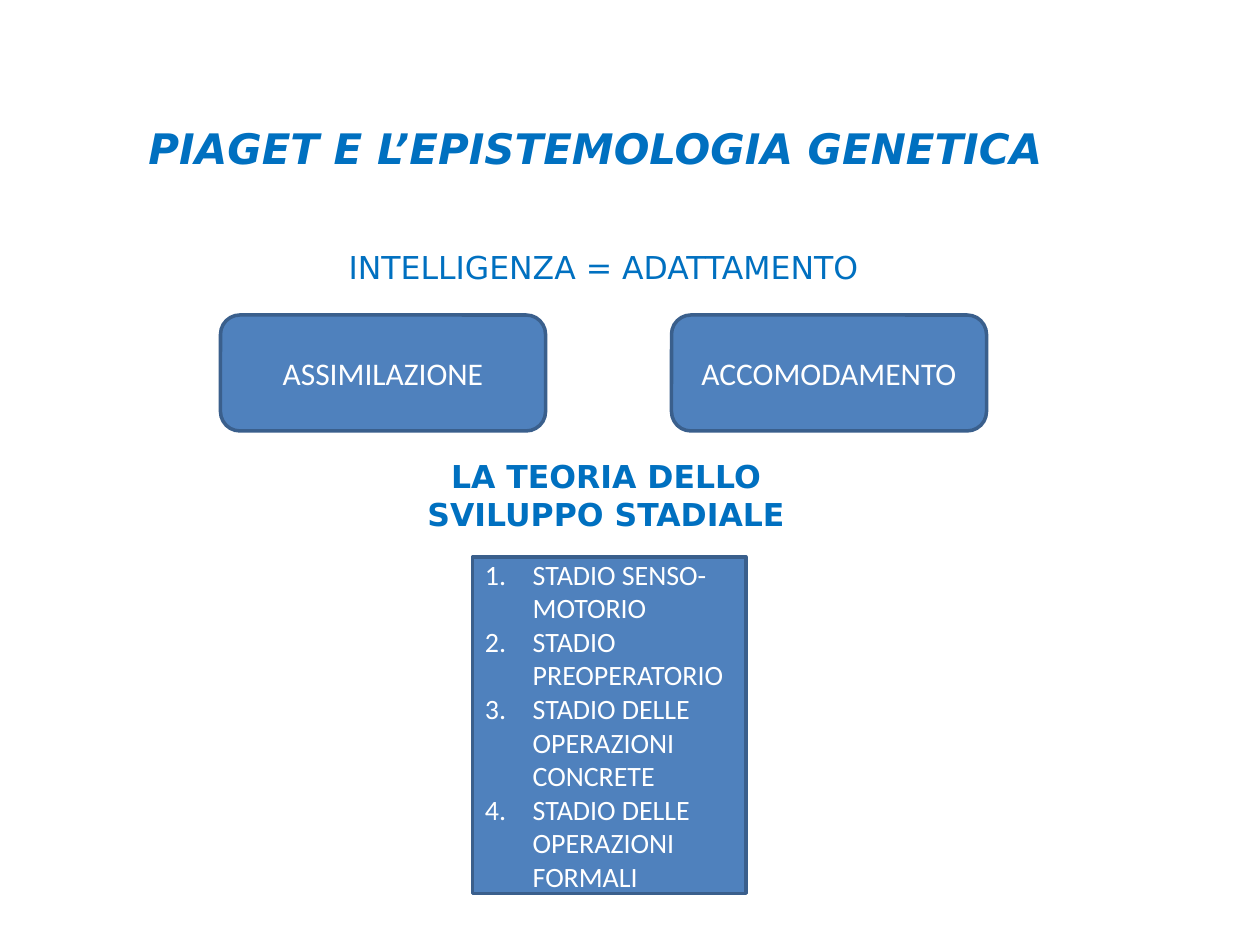
from lxml.etree import SubElement
from pptx import Presentation
from pptx.dml.color import RGBColor
from pptx.enum.shapes import MSO_SHAPE
from pptx.enum.text import MSO_ANCHOR, MSO_AUTO_SIZE, PP_ALIGN
from pptx.oxml.ns import qn
from pptx.util import Inches, Pt

COLORS = {"heading": "0070C0", "box": "4F81BD", "border": "3A5F8C", "box_text": "FFFFFF"}
HEADING_FONT = "DejaVu Sans"
BOX_FONT = "Calibri"

PROCESSES = [("ASSIMILAZIONE", 0, 2.58), ("ACCOMODAMENTO", 3.58, 2.5)]
STAGES = [
    "STADIO SENSO-MOTORIO",
    "STADIO PREOPERATORIO",
    "STADIO DELLE OPERAZIONI CONCRETE",
    "STADIO DELLE OPERAZIONI FORMALI",
]


def color(key):
    return RGBColor.from_string(COLORS[key])


def format_font(font, name, size, color_key, bold=False, italic=False):
    font.name = name
    font.size = Pt(size)
    font.color.rgb = color(color_key)
    font.bold = bold
    font.italic = italic


def add_heading(slide, text, left, top, width, height, size=18,
                align=PP_ALIGN.CENTER, bold=False, italic=False):
    heading = slide.shapes.add_textbox(
        Inches(left), Inches(top), Inches(width), Inches(height))
    frame = heading.text_frame
    frame.word_wrap = True
    frame.auto_size = MSO_AUTO_SIZE.SHAPE_TO_FIT_TEXT
    frame.text = text
    paragraph = frame.paragraphs[0]
    paragraph.alignment = align
    format_font(paragraph.runs[0].font, HEADING_FONT, size, "heading", bold, italic)


def add_box(slide, preset, lines, left, top, width, height, size, align):
    box = slide.shapes.add_shape(
        preset, Inches(left), Inches(top), Inches(width), Inches(height))
    box.shadow.inherit = False
    box.fill.solid()
    box.fill.fore_color.rgb = color("box")
    box.line.color.rgb = color("border")
    box.line.width = Pt(2)
    frame = box.text_frame
    frame.word_wrap = True
    frame.vertical_anchor = MSO_ANCHOR.MIDDLE
    frame.text = "\n".join(lines)
    for paragraph in frame.paragraphs:
        paragraph.alignment = align
        format_font(paragraph.runs[0].font, BOX_FONT, size, "box_text")
    return frame


def add_processes(slide, left, top, height):
    for name, offset, width in PROCESSES:
        add_box(slide, MSO_SHAPE.ROUNDED_RECTANGLE, [name],
                left + offset, top, width, height, 18, PP_ALIGN.CENTER)


def add_stages(slide, left, top, width, height):
    frame = add_box(slide, MSO_SHAPE.RECTANGLE, STAGES,
                    left, top, width, height, 16, PP_ALIGN.LEFT)
    indent = Inches(0.38)
    for paragraph in frame.paragraphs:
        properties = paragraph._p.get_or_add_pPr()
        properties.set("marL", str(indent))
        properties.set("indent", str(-indent))
        SubElement(properties, qn("a:buFont"), typeface="+mj-lt")
        SubElement(properties, qn("a:buAutoNum"), type="arabicPeriod")


def main():
    presentation = Presentation()
    presentation.slide_width = Inches(10)
    presentation.slide_height = Inches(7.5)
    slide = presentation.slides.add_slide(presentation.slide_layouts[6])

    # Title
    add_heading(slide, "PIAGET E L’EPISTEMOLOGIA GENETICA", 1.08, 0.92, 7.58, 0.5,
                size=24, align=PP_ALIGN.LEFT, bold=True, italic=True)

    # Intelligence as adaptation, with its two processes
    add_heading(slide, "INTELLIGENZA = ADATTAMENTO", 2, 1.92, 5.58, 0.4)
    add_processes(slide, 1.75, 2.5, 0.92)

    # Theory of stages
    add_heading(slide, "LA TEORIA DELLO SVILUPPO STADIALE", 3.04, 3.58, 3.54, 0.71,
                bold=True)
    add_stages(slide, 3.75, 4.42, 2.17, 2.67)

    presentation.save("out.pptx")


if __name__ == "__main__":
    main()
